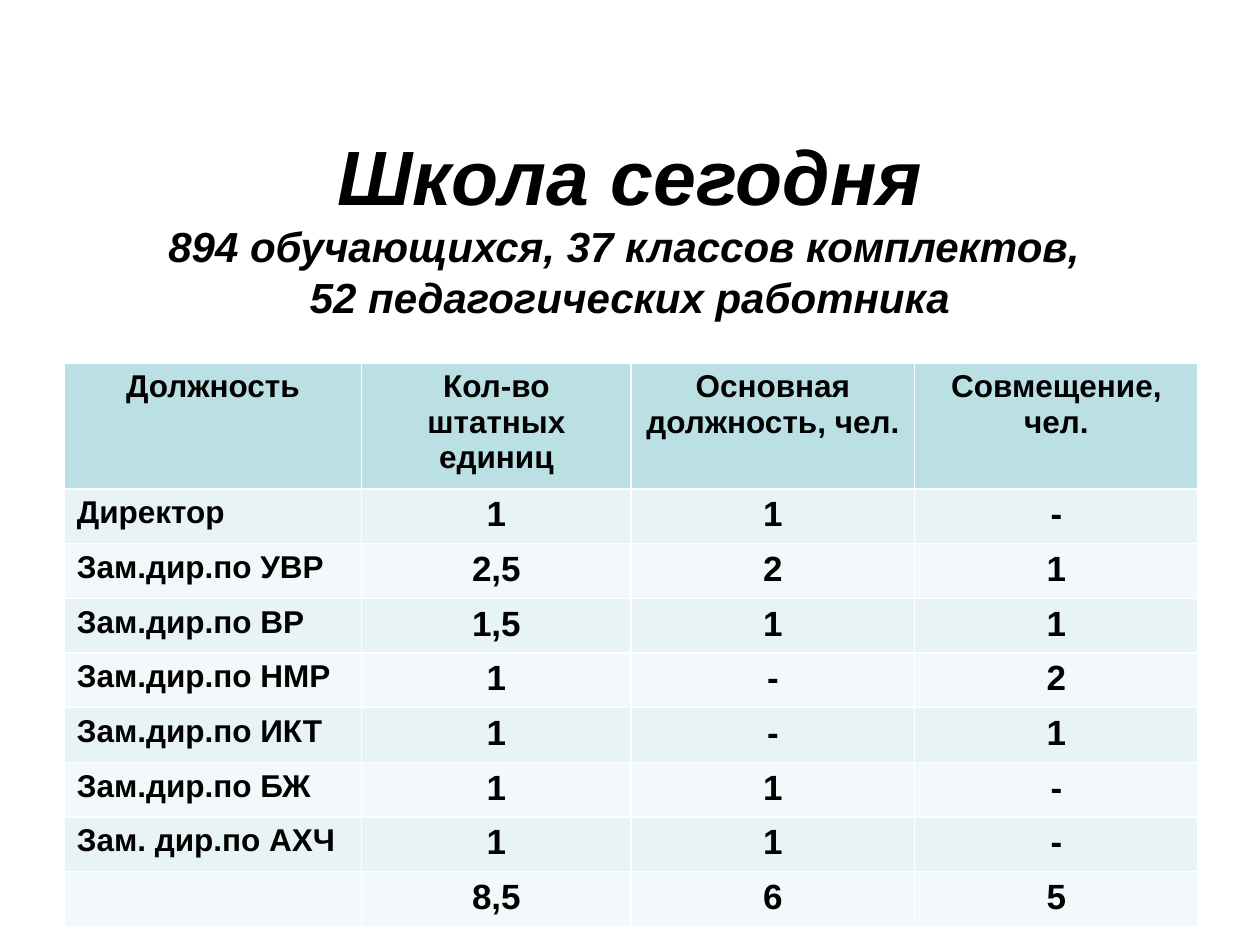
from pptx import Presentation
from pptx.dml.color import RGBColor
from pptx.enum.text import MSO_ANCHOR, PP_ALIGN
from pptx.util import Inches, Pt

CENTER, LEFT = PP_ALIGN.CENTER, PP_ALIGN.LEFT
MIDDLE = MSO_ANCHOR.MIDDLE

BLACK = RGBColor(0x00, 0x00, 0x00)
HEADER_FILL = RGBColor(0xBB, 0xE0, 0xE3)
BAND_FILLS = RGBColor(0xE7, 0xF3, 0xF4), RGBColor(0xF3, 0xF9, 0xFA)
FONT = "Arial"

TITLE_LINES = [
    ("Школа сегодня", 44),
    ("894 обучающихся, 37 классов комплектов, ", 24),
    ("52 педагогических работника", 24),
]
HEADERS = ["Должность", "Кол-во штатных\nединиц",
           "Основная должность, чел.", "Совмещение, чел."]
STAFF = [
    ("Директор", "1", "1", "-"),
    ("Зам.дир.по УВР", "2,5", "2", "1"),
    ("Зам.дир.по ВР", "1,5", "1", "1"),
    ("Зам.дир.по НМР", "1", "-", "2"),
    ("Зам.дир.по ИКТ", "1", "-", "1"),
    ("Зам.дир.по БЖ", "1", "1", "-"),
    ("Зам. дир.по АХЧ", "1", "1", "-"),
    ("", "8,5", "6", "5"),
]
COL_WIDTHS = [2.36, 2.14, 2.25, 2.25]
HEADER_HEIGHT, ROW_HEIGHT = 0.93, 0.41


def add_run(p, text, size, italic=False):
    r = p.add_run()
    r.text = text
    font = r.font
    font.name, font.size = FONT, Pt(size)
    font.bold, font.italic = True, italic
    font.color.rgb = BLACK


def add_title(slide):
    box = slide.shapes.add_textbox(Inches(0.5), Inches(0.76), Inches(9), Inches(2.05))
    tf = box.text_frame
    tf.word_wrap = True
    tf.vertical_anchor = MIDDLE
    p = tf.paragraphs[0]
    p.alignment = CENTER
    for i, (text, size) in enumerate(TITLE_LINES):
        if i:
            p.add_line_break()
        add_run(p, text, size, italic=True)


def fill_cell(cell, text, size, align, color):
    cell.fill.solid()
    cell.fill.fore_color.rgb = color
    tf = cell.text_frame
    for i, line in enumerate(text.split("\n")):
        p = tf.add_paragraph() if i else tf.paragraphs[0]
        p.alignment = align
        if line:
            add_run(p, line, size)


def add_staff_table(slide):
    heights = [HEADER_HEIGHT] + [ROW_HEIGHT] * len(STAFF)
    table = slide.shapes.add_table(
        len(heights), len(COL_WIDTHS), Inches(0.51), Inches(2.88),
        Inches(sum(COL_WIDTHS)), Inches(sum(heights))).table
    for column, width in zip(table.columns, COL_WIDTHS):
        column.width = Inches(width)
    for row, height in zip(table.rows, heights):
        row.height = Inches(height)

    for c, text in enumerate(HEADERS):
        fill_cell(table.cell(0, c), text, 18, CENTER, HEADER_FILL)
    for r, values in enumerate(STAFF):
        for c, text in enumerate(values):
            size, align = (20, CENTER) if c else (18, LEFT)
            fill_cell(table.cell(r + 1, c), text, size, align, BAND_FILLS[r % 2])


def main():
    prs = Presentation()
    prs.slide_width, prs.slide_height = Inches(10), Inches(7.5)
    slide = prs.slides.add_slide(prs.slide_layouts[6])
    add_title(slide)
    add_staff_table(slide)
    prs.save("out.pptx")


if __name__ == "__main__":
    main()
